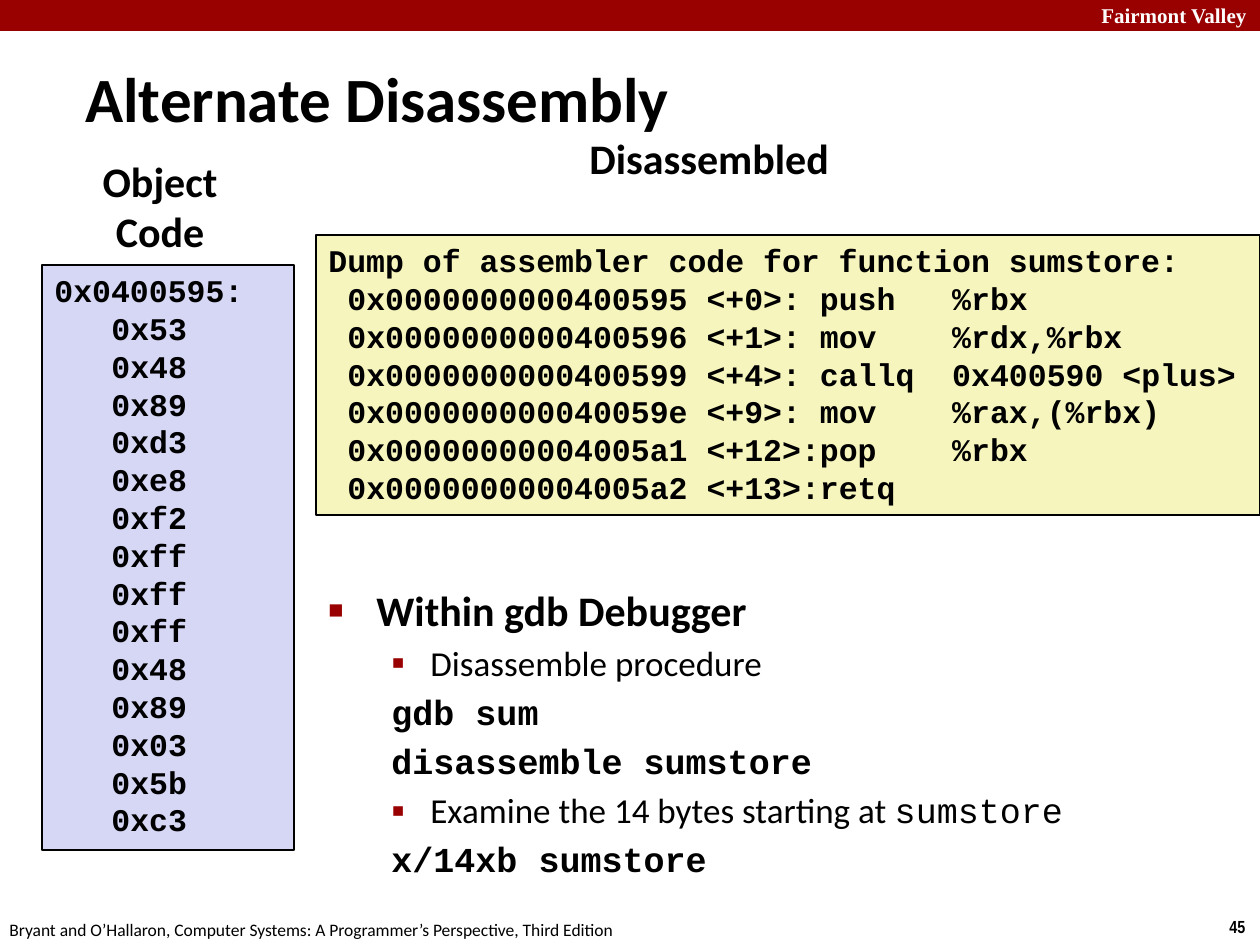
from lxml import etree
from pptx import Presentation
from pptx.dml.color import RGBColor
from pptx.enum.shapes import MSO_SHAPE
from pptx.enum.text import MSO_ANCHOR, PP_ALIGN
from pptx.oxml.ns import qn
from pptx.util import Pt

PX = 914400 // 126
RECTANGLE = MSO_SHAPE.RECTANGLE
TOP = MSO_ANCHOR.TOP
MIDDLE = MSO_ANCHOR.MIDDLE
LEFT = PP_ALIGN.LEFT
CENTER = PP_ALIGN.CENTER

RED = RGBColor(0x99, 0x00, 0x00)
WHITE = RGBColor(0xFF, 0xFF, 0xFF)
BLACK = RGBColor(0x00, 0x00, 0x00)
YELLOW = RGBColor(0xF6, 0xF5, 0xBD)
LAVENDER = RGBColor(0xD6, 0xD6, 0xF5)

SANS = "Calibri"
MONO = "Courier New"
SERIF = "Times New Roman"
NARROW = "Arial Narrow"


def add_span(para, text, font, size, bold, color=BLACK):
    span = para.add_run()
    span.text = text
    span.font.name = font
    span.font.size = Pt(size)
    span.font.bold = bold
    span.font.color.rgb = color


def set_indent(para, margin, hanging=0, bullet=None, percent=100):
    props = para._p.get_or_add_pPr()
    props.set("marL", str(margin * PX))
    props.set("indent", str(-hanging * PX))
    if bullet:
        color = etree.SubElement(props, qn("a:buClr"))
        etree.SubElement(color, qn("a:srgbClr"), val=str(RED))
        etree.SubElement(props, qn("a:buSzPct"), val=str(percent * 1000))
        etree.SubElement(props, qn("a:buFont"), typeface="Arial")
        etree.SubElement(props, qn("a:buChar"), char=bullet)


deck = Presentation()
deck.slide_width = 1260 * PX
deck.slide_height = 945 * PX
page = deck.slides.add_slide(deck.slide_layouts[6])

bar = page.shapes.add_shape(RECTANGLE, 0, 0, 1260 * PX, 31 * PX)
bar.shadow.inherit = False
bar.fill.solid()
bar.fill.fore_color.rgb = RED
bar.line.fill.background()

credit = "Bryant and O’Hallaron, Computer Systems: A Programmer’s Perspective, Third Edition"
labels = [
    (1089, -4, 180, 38, "Fairmont Valley", SERIF, 12, True, WHITE, False, TOP),
    (1217, 910, 43, 34, "45", NARROW, 10, True, BLACK, False, TOP),
    (-3, 913, 640, 34, credit, SANS, 10, False, BLACK, False, TOP),
    (577, 126, 359, 57, "Disassembled", SANS, 24, True, BLACK, True, TOP),
    (73, 58, 860, 79, "Alternate Disassembly", SANS, 36, True, BLACK, True, MIDDLE),
]
for left, top, width, height, text, font, size, bold, color, wrap, anchor in labels:
    box = page.shapes.add_textbox(left * PX, top * PX, width * PX, height * PX)
    box.text_frame.word_wrap = wrap
    box.text_frame.vertical_anchor = anchor
    add_span(box.text_frame.paragraphs[0], text, font, size, bold, color)

box = page.shapes.add_textbox(55 * PX, 149 * PX, 180 * PX, 105 * PX)
box.text_frame.word_wrap = True
para = box.text_frame.paragraphs[0]
para.alignment = CENTER
set_indent(para, 30)
add_span(para, "Object", SANS, 24, True)
para.add_line_break()
add_span(para, "Code", SANS, 24, True)

instructions = [
    ("400595", "<+0>: ", "push", "%rbx"),
    ("400596", "<+1>: ", "mov", "%rdx,%rbx"),
    ("400599", "<+4>: ", "callq", "0x400590 <plus>"),
    ("40059e", "<+9>: ", "mov", "%rax,(%rbx)"),
    ("4005a1", "<+12>:", "pop", "%rbx"),
    ("4005a2", "<+13>:", "retq", ""),
]
dump = [
    f"0x{address:0>16} {offset}{opcode:<7}{operands}".rstrip()
    for address, offset, opcode, operands in instructions
]
code_bytes = "53 48 89 d3 e8 f2 ff ff ff 48 89 03 5b c3".split()
listings = [
    (316, 235, 944, 280, YELLOW, "Dump of assembler code for function sumstore:", dump, 19),
    (42, 265, 252, 585, LAVENDER, "0x0400595:", [f"0x{byte}" for byte in code_bytes], 57),
]
for left, top, width, height, color, heading, lines, margin in listings:
    box = page.shapes.add_shape(RECTANGLE, left * PX, top * PX, width * PX, height * PX)
    box.shadow.inherit = False
    box.fill.solid()
    box.fill.fore_color.rgb = color
    box.line.color.rgb = BLACK
    box.line.width = Pt(1)
    frame = box.text_frame
    frame.word_wrap = True
    frame.vertical_anchor = TOP
    para = frame.paragraphs[0]
    para.alignment = LEFT
    add_span(para, heading, MONO, 18, True)
    for line in lines:
        para = frame.add_paragraph()
        para.alignment = LEFT
        set_indent(para, margin)
        add_span(para, line, MONO, 18, True)

box = page.shapes.add_textbox(316 * PX, 578 * PX, 868 * PX, 310 * PX)
frame = box.text_frame
frame.word_wrap = True
para = frame.paragraphs[0]
set_indent(para, 48, 48, "■", 60)
add_span(para, "Within gdb Debugger", SANS, 24, True)
steps = [
    ("▪", [("Disassemble procedure", SANS, False)]),
    (None, [("gdb sum", MONO, True)]),
    (None, [("disassemble sumstore", MONO, True)]),
    ("▪", [("Examine the 14 bytes starting at ", SANS, False), ("sumstore", MONO, False)]),
    (None, [("x/14xb sumstore", MONO, True)]),
]
for bullet, spans in steps:
    para = frame.add_paragraph()
    para.level = 1
    para.space_before = Pt(4)
    set_indent(para, 102, 39, bullet, 110)
    for text, font, bold in spans:
        add_span(para, text, font, 20, bold)

deck.save("out.pptx")
